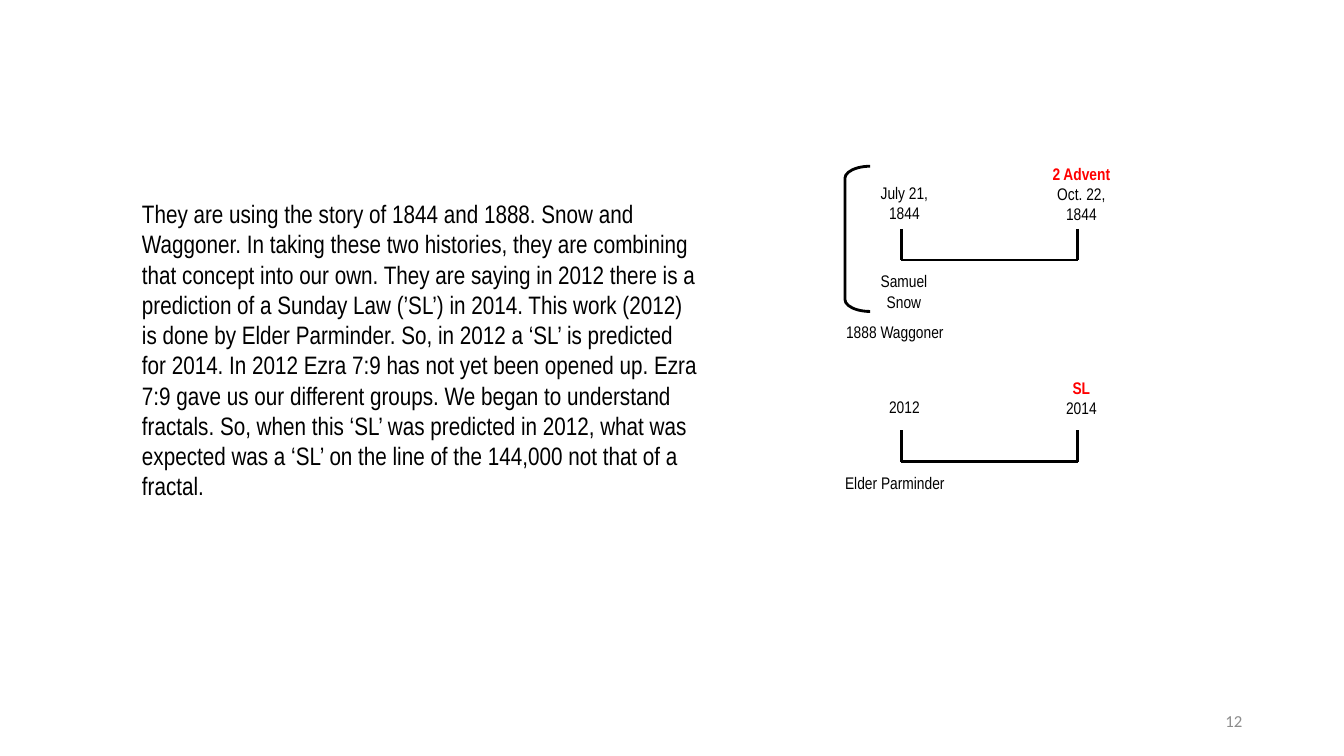
import pptx
import pptx.dml.color
import pptx.enum.shapes
import pptx.enum.text
import pptx.oxml.ns
import pptx.util
import lxml.etree

Inches = pptx.util.Inches
ALIGN = pptx.enum.text.PP_ALIGN
ANCHOR = pptx.enum.text.MSO_ANCHOR

COLORS = {"ink": "000000", "event": "FF0000", "number": "8C8C8C"}
NARROW = "Arial Narrow"
LABEL_INSET = 0.04
STEM = 0.31
SPAN = 1.75
LINE_WIDTH = pptx.util.Pt(2)

STORY = (
    "They are using the story of 1844 and 1888. Snow and Waggoner. In taking these two "
    "histories, they are combining that concept into our own. They are saying in 2012 there "
    "is a prediction of a Sunday Law (’SL’) in 2014. This work (2012) is done by Elder "
    "Parminder. So, in 2012 a ‘SL’ is predicted for 2014. In 2012 Ezra 7:9 has not yet been "
    "opened up. Ezra 7:9 gave us our different groups. We began to understand fractals. So, "
    "when this ‘SL’ was predicted in 2012, what was expected was a ‘SL’ on the line of the "
    "144,000 not that of a fractal."
)


def rgb(name):
    """Return a palette colour."""
    return pptx.dml.color.RGBColor.from_string(COLORS[name])


def add_text(shapes, box, lines, size=12, font=NARROW, align=ALIGN.CENTER,
             anchor=ANCHOR.TOP, inset=LABEL_INSET):
    """Place one paragraph per (words, colour, bold) line in the box."""
    frame = shapes.add_textbox(*map(Inches, box)).text_frame
    frame.word_wrap = True
    frame.vertical_anchor = anchor
    if inset is not None:
        frame.margin_left = frame.margin_right = Inches(inset)
        frame.margin_top = frame.margin_bottom = Inches(inset)
    for index, (words, color, bold) in enumerate(lines):
        paragraph = frame.add_paragraph() if index else frame.paragraphs[0]
        paragraph.alignment = align
        run = paragraph.add_run()
        run.text = words
        run.font.name = font
        run.font.size = pptx.util.Pt(size)
        run.font.bold = bold
        run.font.color.rgb = rgb(color)


def add_line(shapes, start, end):
    """Draw a straight black line without a shadow."""
    line = shapes.add_connector(
        pptx.enum.shapes.MSO_CONNECTOR.STRAIGHT, *map(Inches, (*start, *end)))
    line.line.color.rgb = rgb("ink")
    line.line.width = LINE_WIDTH
    lxml.etree.SubElement(line._element.spPr, pptx.oxml.ns.qn("a:effectLst"))


def add_timeline(shapes, left, top, start, start_height, event, date, event_height):
    """Draw a two-stem timeline with its dates standing on the stems."""
    right, base = left + SPAN, top + STEM
    add_line(shapes, (left, base), (right, base))
    for x in (left, right):
        add_line(shapes, (x, top), (x, base))
    add_text(shapes, (left - 0.25, top - start_height, 0.56, start_height),
             [(start, "ink", False)])
    add_text(shapes, (right - 0.31, top - event_height, 0.69, event_height),
             [(event, "event", True), (date, "ink", False)])


def add_caption(shapes, left, top, width, height, words):
    """Write a person's name under a timeline."""
    add_text(shapes, (left, top, width, height), [(words, "ink", False)])


def add_bracket(shapes, left, top, width, height):
    """Draw the rounded bracket beside the first history."""
    bracket = shapes.add_shape(pptx.enum.shapes.MSO_SHAPE.LEFT_BRACKET,
                               *map(Inches, (left, top, width, height)))
    bracket.adjustments[0] = 0.48
    bracket.shadow.inherit = False
    bracket.fill.background()
    bracket.line.color.rgb = rgb("ink")
    bracket.line.width = LINE_WIDTH


def add_first_history(slide, left, top):
    """Draw the 1844 and 1888 history from its first stem."""
    shapes = slide.shapes.add_group_shape().shapes
    add_timeline(shapes, left, top, "July 21, 1844", 0.5, "2 Advent", "Oct. 22, 1844", 0.69)
    add_caption(shapes, left - 0.32, top + STEM + 0.07, 0.69, 0.5, "Samuel Snow")
    add_bracket(shapes, left - 0.56, top - 0.62, 0.25, 1.44)
    add_caption(shapes, left - 0.69, top + 0.88, 1.25, 0.31, "1888 Waggoner")


def add_second_history(slide, left, top):
    """Draw the 2012 and 2014 history from its first stem."""
    shapes = slide.shapes.add_group_shape().shapes
    add_timeline(shapes, left, top, "2012", 0.37, "SL", "2014", 0.56)
    add_caption(shapes, left - 0.69, top + STEM + 0.07, 1.25, 0.31, "Elder Parminder")


def main():
    """Build and save the slide."""
    deck = pptx.Presentation()
    deck.slide_width, deck.slide_height = Inches(13.33), Inches(7.5)
    slide = deck.slides.add_slide(deck.slide_layouts.get_by_name("Blank"))
    add_text(slide.shapes, (9.42, 6.95, 3, 0.4), [("12", "number", False)],
             font="Calibri", align=ALIGN.RIGHT, anchor=ANCHOR.MIDDLE, inset=None)
    add_text(slide.shapes, (1.31, 1.92, 5.71, 3.13), [(STORY, "ink", False)],
             size=18, align=ALIGN.LEFT, inset=None)
    add_first_history(slide, 8.94, 2.27)
    add_second_history(slide, 8.94, 4.27)
    deck.save("out.pptx")


if __name__ == "__main__":
    main()
